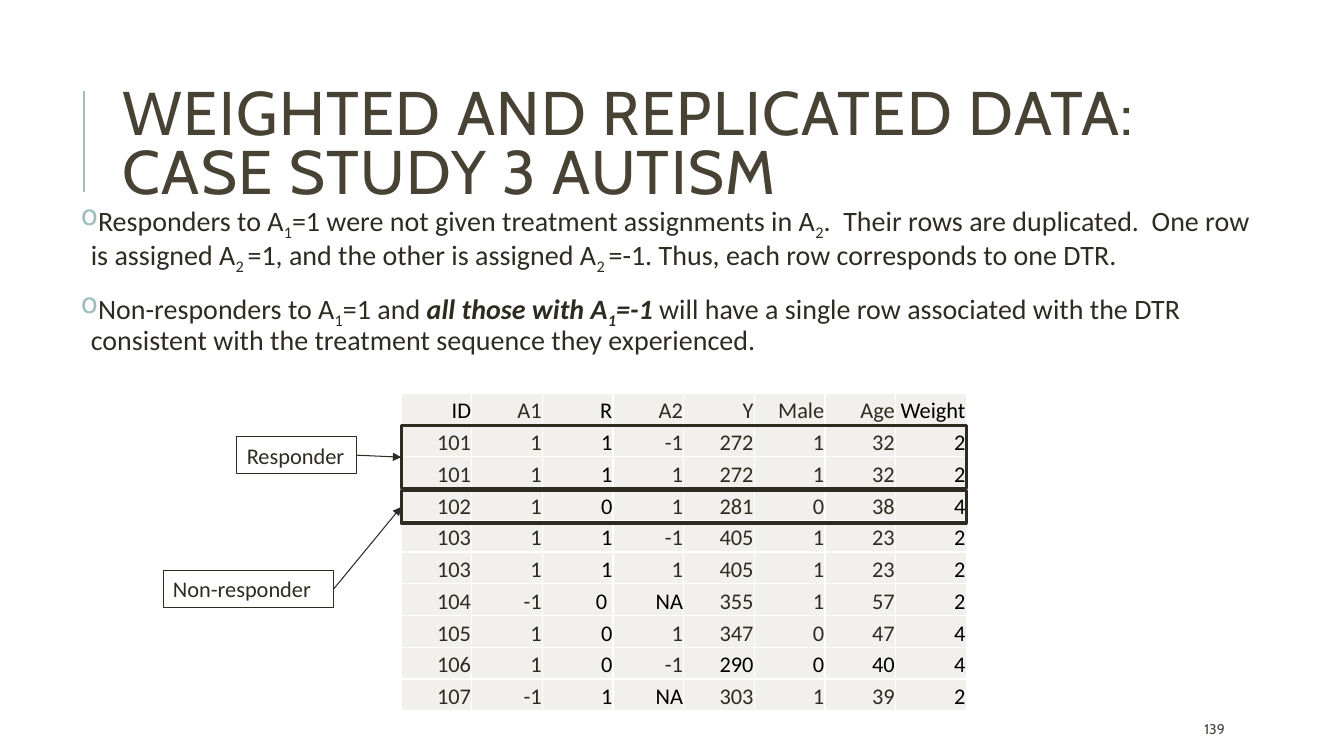
import dataclasses
import typing

import lxml.etree
import pptx
import pptx.dml.color
import pptx.enum.shapes
import pptx.enum.text
import pptx.oxml.ns
import pptx.util

Cm = pptx.util.Cm
Pt = pptx.util.Pt
RGBColor = pptx.dml.color.RGBColor
qn = pptx.oxml.ns.qn
Anchor = pptx.enum.text.MSO_ANCHOR
Align = pptx.enum.text.PP_ALIGN

TITLE_BROWN = RGBColor(0x47, 0x42, 0x33)
INK = RGBColor(0x2E, 0x2B, 0x21)
TEAL = RGBColor(0x9C, 0xBE, 0xBD)
CELL_GREY = RGBColor(0xF1, 0xF0, 0xEC)
WHITE = RGBColor(0xFF, 0xFF, 0xFF)
BLACK = RGBColor(0, 0, 0)

TABLE_LEFT, TABLE_TOP = 10.11, 9.91
COLUMN_WIDTH, ROW_HEIGHT = 1.78, 0.8
TOP, LEFT, BOTTOM, RIGHT = range(4)


@dataclasses.dataclass(frozen=True)
class Area:
    left: float
    top: float
    width: float
    height: float

    def lengths(self) -> list[pptx.util.Length]:
        return [Cm(value) for value in dataclasses.astuple(self)]


@dataclasses.dataclass(frozen=True)
class Span:
    text: str
    subscript: bool = False
    strong: bool = False


@dataclasses.dataclass(frozen=True)
class Callout:
    label: str
    label_area: Area
    frame_area: Area


BULLETS = [
    [
        Span("Responders to A"),
        Span("1", subscript=True),
        Span("=1 were not given treatment assignments in A"),
        Span("2", subscript=True),
        Span(".  Their rows are duplicated.  One row is assigned A"),
        Span("2 ", subscript=True),
        Span("=1, and the other is assigned A"),
        Span("2 ", subscript=True),
        Span("=-1. Thus, each row corresponds to one DTR."),
    ],
    [
        Span("Non-responders to A"),
        Span("1", subscript=True),
        Span("=1 and "),
        Span("all those with A", strong=True),
        Span("1", subscript=True, strong=True),
        Span("=-1 ", strong=True),
        Span("will have a single row associated with the DTR consistent with "
             "the treatment sequence they experienced."),
    ],
]

ROWS = [
    ["ID", "A1", "R", "A2", "Y", "Male", "Age", "Weight"],
    ["101", "1", "1", "-1", "272", "1", "32", "2"],
    ["101", "1", "1", "1", "272", "1", "32", "2"],
    ["102", "1", "0", "1", "281", "0", "38", "4"],
    ["103", "1", "1", "-1", "405", "1", "23", "2"],
    ["103", "1", "1", "1", "405", "1", "23", "2"],
    ["104", "-1", "0 ", "NA", "355", "1", "57", "2"],
    ["105", "1", "0", "1", "347", "0", "47", "4"],
    ["106", "1", "0", "-1", "290", "0", "40", "4"],
    ["107", "-1", "1", "NA", "303", "1", "39", "2"],
]
BLACK_COLUMNS = {ROWS[0].index("R"), ROWS[0].index("Weight")}
BLACK_TEXTS = {"ID", "NA", "290", "40"}
BLACK_CELLS = {(8, 5)}
TABLE_WIDTH = COLUMN_WIDTH * len(ROWS[0])

CALLOUTS = [
    Callout("Responder", Area(5.97, 11.0, 3.02, 0.94),
            Area(TABLE_LEFT, 10.72, TABLE_WIDTH, 1.6)),
    Callout("Non-responder", Area(4.11, 14.37, 4.3, 0.94),
            Area(TABLE_LEFT, 12.37, TABLE_WIDTH, 0.81)),
]


def add_span(para: typing.Any, text: str, size: float, color: RGBColor,
             font: str = "Calibri") -> typing.Any:
    span = para.add_run()
    span.text = text
    span.font.size = Pt(size)
    span.font.name = font
    span.font.color.rgb = color
    return span


def add_box(page: typing.Any, area: Area, anchor: Anchor) -> typing.Any:
    frame = page.shapes.add_textbox(*area.lengths()).text_frame
    frame.word_wrap = True
    frame.vertical_anchor = anchor
    return frame


def add_line(page: typing.Any, start: tuple[float, float], end: tuple[float, float],
             color: RGBColor, width: float) -> typing.Any:
    line = page.shapes.add_connector(
        pptx.enum.shapes.MSO_CONNECTOR.STRAIGHT, *map(Cm, start + end))
    line.line.color.rgb = color
    line.line.width = Pt(width)
    lxml.etree.SubElement(line._element.spPr, qn("a:effectLst"))
    return line


def add_rectangle(page: typing.Any, area: Area, width: float) -> typing.Any:
    rectangle = page.shapes.add_shape(
        pptx.enum.shapes.MSO_SHAPE.RECTANGLE, *area.lengths())
    rectangle.shadow.inherit = False
    rectangle.fill.background()
    rectangle.line.color.rgb = INK
    rectangle.line.width = Pt(width)
    return rectangle


def add_title(page: typing.Any) -> None:
    add_line(page, (2.11, 4.83), (2.11, 2.29), TEAL, 1.5)
    para = add_box(page, Area(2.84, 1.63, 29.46, 4.17), Anchor.MIDDLE).paragraphs[0]
    para.line_spacing = 0.8
    span = add_span(para, "WEIGHTED AND REPLICATED DATA: CASE STUDY 3 AUTISM",
                    44, TITLE_BROWN, "Cabin")
    span._r.get_or_add_rPr().set("spc", "100")


def add_bullets(page: typing.Any) -> None:
    frame = add_box(page, Area(1.91, 5.0, 30.12, 5.77), Anchor.TOP)
    frame.margin_left = frame.margin_right = Cm(0.13)
    frame.margin_top = frame.margin_bottom = Cm(0.13)
    for index, bullet in enumerate(BULLETS):
        para = frame.add_paragraph() if index else frame.paragraphs[0]
        para.line_spacing = 0.9
        para.space_before = Pt(12)
        para.space_after = Pt(2)
        properties = para._p.get_or_add_pPr()
        properties.set("marL", str(Cm(0.25)))
        properties.set("indent", str(-Cm(0.25)))
        bullet_color = lxml.etree.SubElement(properties, qn("a:buClr"))
        lxml.etree.SubElement(bullet_color, qn("a:srgbClr"), val=str(TEAL))
        lxml.etree.SubElement(properties, qn("a:buChar"), char="o")
        for piece in bullet:
            span = add_span(para, piece.text, 20, INK)
            span.font.bold = span.font.italic = piece.strong
            if piece.subscript:
                span._r.get_or_add_rPr().set("baseline", "-25000")


def set_borders(cell: typing.Any) -> None:
    properties = cell._tc.get_or_add_tcPr()
    for index, side in enumerate(("a:lnL", "a:lnR", "a:lnT", "a:lnB")):
        border = lxml.etree.Element(qn(side), w=str(Pt(1)))
        fill = lxml.etree.SubElement(border, qn("a:solidFill"))
        lxml.etree.SubElement(fill, qn("a:srgbClr"), val=str(WHITE))
        properties.insert(index, border)


def add_data_table(page: typing.Any) -> None:
    area = Area(TABLE_LEFT, TABLE_TOP, TABLE_WIDTH, ROW_HEIGHT * len(ROWS))
    table = page.shapes.add_table(len(ROWS), len(ROWS[0]), *area.lengths()).table
    table.first_row = table.horz_banding = False
    for row_index, texts in enumerate(ROWS):
        for column_index, text in enumerate(texts):
            cell = table.cell(row_index, column_index)
            cell.fill.solid()
            cell.fill.fore_color.rgb = CELL_GREY
            cell.vertical_anchor = Anchor.BOTTOM
            cell.margin_left = cell.margin_right = cell.margin_top = Cm(0.02)
            cell.margin_bottom = 0
            set_borders(cell)
            para = cell.text_frame.paragraphs[0]
            para.alignment = Align.RIGHT
            is_black = (column_index in BLACK_COLUMNS or text in BLACK_TEXTS
                        or (row_index, column_index) in BLACK_CELLS)
            add_span(para, text, 16, BLACK if is_black else INK)


def add_callout(page: typing.Any, callout: Callout) -> None:
    frame = add_rectangle(page, callout.frame_area, 2.25)
    label = add_rectangle(page, callout.label_area, 0.75)
    para = label.text_frame.paragraphs[0]
    para.alignment = Align.LEFT
    add_span(para, callout.label, 16, INK)
    arrow = add_line(page, (0, 0), (1, 1), INK, 0.75)
    arrow.begin_connect(label, RIGHT)
    arrow.end_connect(frame, LEFT)
    lxml.etree.SubElement(arrow.line._get_or_add_ln(), qn("a:tailEnd"), type="triangle")


def main() -> None:
    deck = pptx.Presentation()
    deck.slide_width, deck.slide_height = Cm(33.87), Cm(19.05)
    page = deck.slides.add_slide(deck.slide_layouts[6])
    add_title(page)
    add_bullets(page)
    number = add_box(page, Area(30.1, 17.98, 2.69, 0.76), Anchor.MIDDLE)
    add_span(number.paragraphs[0], "139", 10, TITLE_BROWN, "Cabin")
    add_data_table(page)
    for callout in CALLOUTS:
        add_callout(page, callout)
    deck.save("out.pptx")


if __name__ == "__main__":
    main()
